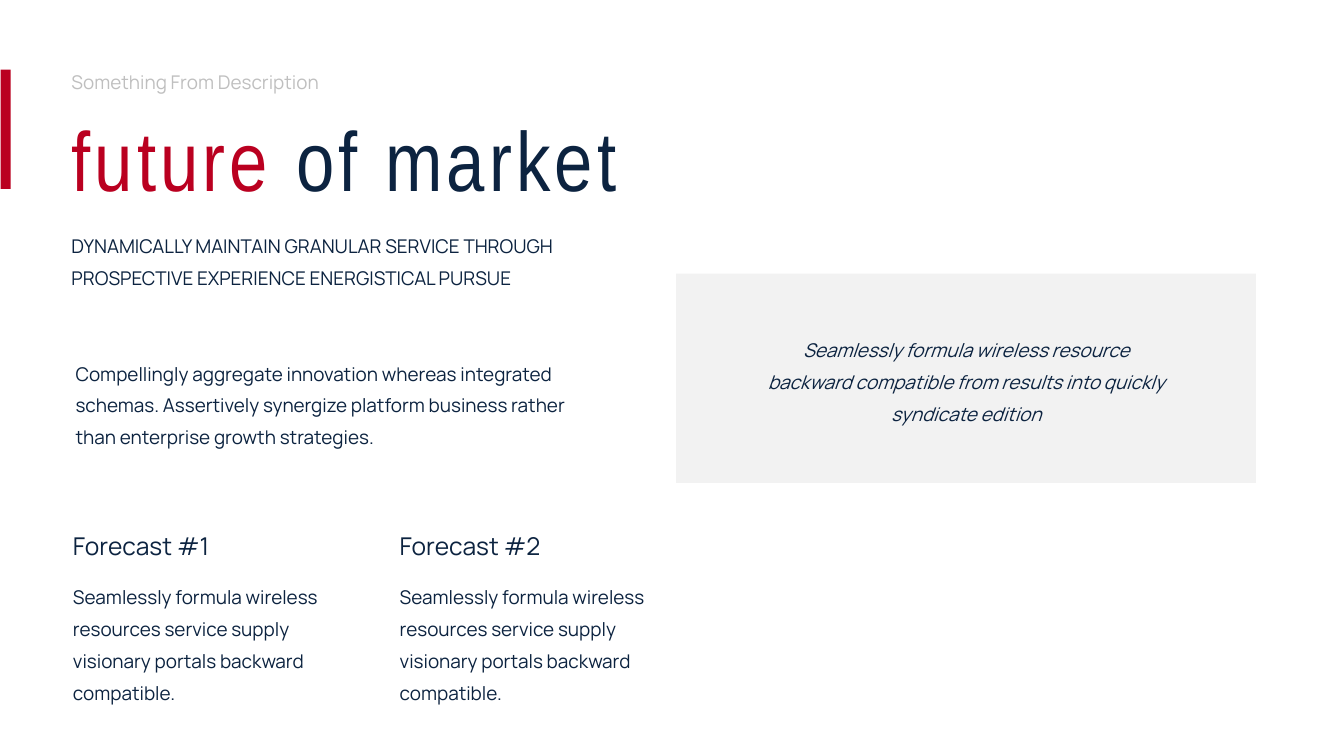
from dataclasses import dataclass

from pptx import Presentation
from pptx import util as u
from pptx.dml import color
from pptx.enum import shapes, text

WIDTH, HEIGHT = 26.66, 15


@dataclass(frozen=True)
class Theme:
    red: str = "BA0020"
    navy: str = "0C2340"
    muted: str = "BFBFBF"
    panel: str = "F2F2F2"
    title_font: str = "Arial Narrow"
    body_font: str = "Manrope"
    title_size: int = 120
    heading_size: int = 35
    body_size: int = 27
    title_tracking: int = 600
    title_leading: float = 0.8
    body_leading: float = 1.4
    gap: int = 24


THEME = Theme()


def place(left, top, width, height):
    return (
        u.Inches(WIDTH * left / 100),
        u.Inches(HEIGHT * top / 100),
        u.Inches(WIDTH * width / 100),
        u.Inches(HEIGHT * height / 100),
    )


def add_block(parent, box, fill):
    shape = parent.shapes.add_shape(shapes.MSO_SHAPE.RECTANGLE, *place(*box))
    shape.shadow.inherit = False
    shape.fill.solid()
    shape.fill.fore_color.rgb = color.RGBColor.from_string(fill)
    shape.line.fill.background()


def add_frame(parent, box):
    frame = parent.shapes.add_textbox(*place(*box)).text_frame
    frame.word_wrap = True
    frame.auto_size = text.MSO_AUTO_SIZE.SHAPE_TO_FIT_TEXT
    return frame


def style_run(run, size, tint, font, italic=None):
    run.font.size = u.Pt(size)
    run.font.name = font
    run.font.italic = italic
    run.font.color.rgb = color.RGBColor.from_string(tint)


def style_paragraph(paragraph, size=THEME.body_size, tint=THEME.navy, italic=None):
    paragraph.line_spacing = THEME.body_leading
    for run in paragraph.runs:
        style_run(run, size, tint, THEME.body_font, italic)


def add_text(parent, box, words, tint=THEME.navy):
    frame = add_frame(parent, box)
    frame.text = words
    style_paragraph(frame.paragraphs[0], tint=tint)


def add_title(slide, box, parts):
    paragraph = add_frame(slide, box).paragraphs[0]
    paragraph.line_spacing = THEME.title_leading
    for words, tint in parts:
        run = paragraph.add_run()
        run.text = words
        style_run(run, THEME.title_size, tint, THEME.title_font)
        run.font._element.set("spc", str(THEME.title_tracking))


def add_quote(slide, panel_box, text_box, lines):
    group = slide.shapes.add_group_shape()
    add_block(group, panel_box, THEME.panel)
    paragraph = add_frame(group, text_box).paragraphs[0]
    paragraph.text = "\v".join(lines)
    paragraph.alignment = text.PP_ALIGN.CENTER
    style_paragraph(paragraph, italic=True)


def add_forecast(slide, box, heading, words):
    frame = add_frame(slide, box)
    frame.text = heading
    style_paragraph(frame.paragraphs[0], THEME.heading_size)
    paragraph = frame.add_paragraph()
    paragraph.text = words
    paragraph.space_before = u.Pt(THEME.gap)
    style_paragraph(paragraph)


def main():
    presentation = Presentation()
    presentation.slide_width = u.Inches(WIDTH)
    presentation.slide_height = u.Inches(HEIGHT)
    slide = presentation.slides.add_slide(presentation.slide_layouts[6])

    margin = 4.95
    add_title(
        slide,
        (margin, 16.53, 47.26, 12.13),
        [("future ", THEME.red), ("of market", THEME.navy)],
    )
    add_text(slide, (margin, 7.8, 33.46, 4.73), "Something From Description", THEME.muted)
    add_block(slide, (0.04, 9.2, 0.75, 15.8), THEME.red)
    add_text(
        slide,
        (margin, 29.47, 42.05, 8.8),
        "DYNAMICALLY MAINTAIN GRANULAR SERVICE THROUGH "
        "PROSPECTIVE EXPERIENCE ENERGISTICAL PURSUE",
    )
    add_quote(
        slide,
        (50.3, 36.2, 43.14, 27.67),
        (51.73, 43.27, 40.32, 13.07),
        [
            "Seamlessly formula wireless resource",
            "backward compatible from results into quickly",
            "syndicate edition",
        ],
    )
    for column in range(2):
        add_forecast(
            slide,
            (5.06 + 24.31 * column, 68.33, 22.09, 25),
            f"Forecast #{column + 1}",
            "Seamlessly formula wireless resources service supply "
            "visionary portals backward compatible.",
        )
    add_text(
        slide,
        (5.25, 46.4, 40.32, 13.07),
        "Compellingly aggregate innovation whereas integrated schemas. "
        "Assertively synergize platform business rather than enterprise "
        "growth strategies.",
    )

    presentation.save("out.pptx")


if __name__ == "__main__":
    main()
